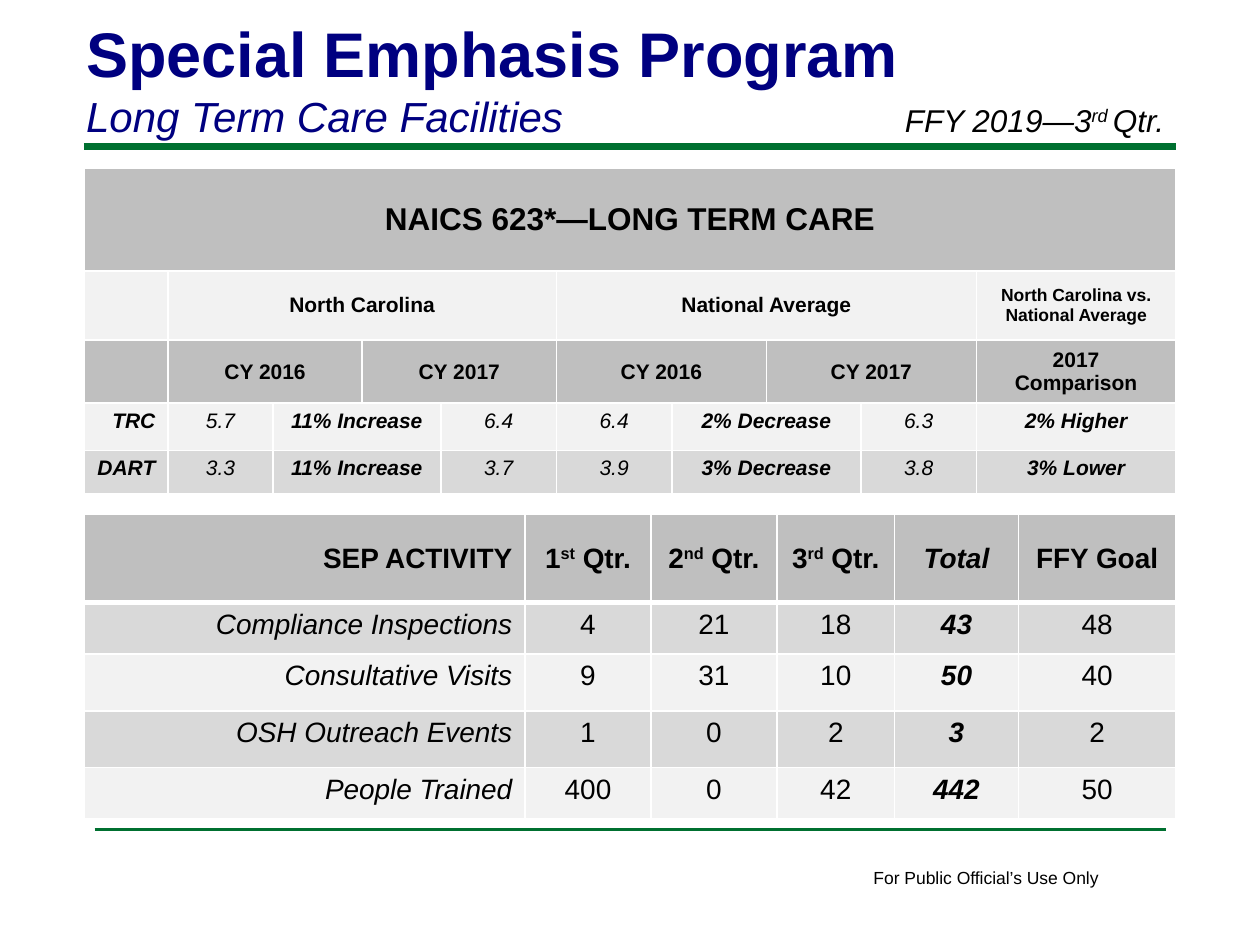
"""Build the long term care special emphasis slide on a grid of twelfths of an inch."""
from lxml import etree
from pptx import Presentation, util as u
from pptx.dml.color import RGBColor
from pptx.enum import shapes, text
from pptx.oxml.ns import qn

T = dict(font="Arial", navy="000080", black="000000", green="007030", white="FFFFFF",
         dark="BFBFBF", mid="D9D9D9", light="F2F2F2",
         title=36, subtitle=24, heading=18, activity=16, rates=12, small=10)
G = u.Inches(1) / 12
AL = text.PP_ALIGN


def write(p, words, size, color="black", **fmt):
    for i, part in enumerate(words.split("^")):
        r = p.add_run()
        r.text = part
        r.font.color.rgb = RGBColor.from_string(T[color])
        for key, value in dict(name=T["font"], size=u.Pt(T[size]), **fmt).items():
            setattr(r.font, key, value)
        if i % 2:
            r.font._element.set("baseline", "30000")


def add_grid(s, top, cols, rows, tones, data, heads, rule, style):
    tbl = s.shapes.add_table(len(rows), len(cols), int(8 * G), int(top * G),
                             int(sum(cols) * G), int(sum(rows) * G)).table
    tbl.first_row = tbl.horz_banding = False
    for parts, sizes, name in ((tbl.columns, cols, "width"), (tbl.rows, rows, "height")):
        for part, size in zip(parts, sizes):
            setattr(part, name, int(size * G))
    for y, line in enumerate(data):
        for x, words in enumerate(line):
            cell = tbl.cell(y, x)
            if words is not None:
                end = x
                while end + 1 < len(line) and line[end + 1] is None:
                    end += 1
                if end > x:
                    cell.merge(tbl.cell(y, end))
            edges = dict(L=1, R=1, T=rule if y == 1 else 1, B=rule if y == 0 else 1)
            for side, width in edges.items():
                ln = etree.SubElement(cell._tc.get_or_add_tcPr(), qn("a:ln" + side),
                                      w=str(u.Pt(width)))
                fill = etree.SubElement(ln, qn("a:solidFill"))
                etree.SubElement(fill, qn("a:srgbClr"), val=T["white"])
            cell.fill.solid()
            cell.fill.fore_color.rgb = RGBColor.from_string(T[tones[y]])
            if y < heads:
                cell.vertical_anchor = text.MSO_ANCHOR.MIDDLE
            p = cell.text_frame.paragraphs[0]
            p.alignment = AL.RIGHT if x == 0 and y >= heads - (heads == 1) else AL.CENTER
            write(p, words or "", **style(y, x))
    tbl.cell(0, 0).text_frame.paragraphs[0].alignment = AL.CENTER if heads > 1 else AL.RIGHT


prs = Presentation()
prs.slide_width, prs.slide_height = int(120 * G), int(90 * G)
s = prs.slides.add_slide(prs.slide_layouts[5])

for left, y, right, width in ((8, 14, 112, 4), (9, 79, 111, 2)):
    rule = s.shapes.add_connector(shapes.MSO_CONNECTOR.STRAIGHT,
                                  *(int(v * G) for v in (left, y, right, y)))
    rule.line.color.rgb = RGBColor.from_string(T["green"])
    rule.line.width = u.Pt(width)
    etree.SubElement(rule._element.spPr, qn("a:effectLst"))

title = s.shapes.title
title.left, title.top, title.width, title.height = (int(v * G) for v in (7, 0.7, 99, 13.3))
tf = title.text_frame
for key, value in dict(word_wrap=True, auto_size=text.MSO_AUTO_SIZE.NONE,
                       vertical_anchor=text.MSO_ANCHOR.BOTTOM).items():
    setattr(tf, key, value)
write(tf.paragraphs[0], "Special Emphasis Program", "title", "navy", bold=True)
write(tf.add_paragraph(), "Long Term Care Facilities", "subtitle", "navy", italic=True)
for p in tf.paragraphs:
    p.alignment = AL.LEFT

add_grid(
    s, 16, [8, 10, 8.5, 7.5, 11, 11, 9, 9, 11, 19], [9.8, 6.6, 6, 4.5, 4.1],
    ["dark", "light", "dark", "light", "mid"],
    [["NAICS 623*—LONG TERM CARE"] + [None] * 9,
     ["", "North Carolina", None, None, None, "National Average", None, None, None,
      "North Carolina vs. National Average"],
     ["", "CY 2016", None, "CY 2017", None, "CY 2016", None, "CY 2017", None,
      "2017 Comparison"],
     ["TRC", "5.7", "11% Increase", None, "6.4", "6.4", "2% Decrease", None, "6.3",
      "2% Higher"],
     ["DART", "3.3", "11% Increase", None, "3.7", "3.9", "3% Decrease", None, "3.8",
      "3% Lower"]],
    3, 1,
    lambda y, x: dict(size="heading" if y == 0 else "small" if (y, x) == (1, 9) else "rates",
                      bold=y < 3 or x in (0, 2, 6, 9), italic=y > 2))

add_grid(
    s, 49, [42, 12, 12, 11.2, 11.8, 15], [8.4, 4.9, 5.4, 5.4, 4.9],
    ["dark", "mid", "light", "mid", "light"],
    [["SEP ACTIVITY", "1^st^ Qtr.", "2^nd^ Qtr.", "3^rd^ Qtr.", "Total", "FFY Goal"],
     ["Compliance Inspections", "4", "21", "18", "43", "48"],
     ["Consultative Visits", "9", "31", "10", "50", "40"],
     ["OSH Outreach Events", "1", "0", "2", "3", "2"],
     ["People Trained", "400", "0", "42", "442", "50"]],
    1, 3,
    lambda y, x: dict(size="activity", bold=y == 0 or x == 4,
                      italic=x == 4 or (x == 0 and y > 0)))

for box, words, size, wrap, italic in (
        ((85, 9, 30, 4.8), "FFY 2019—3^rd ^Qtr.", "heading", True, True),
        ((82, 82, 24.1, 3.2), "For Public Official’s Use Only", "small", False, False)):
    sp = s.shapes.add_textbox(*(int(v * G) for v in box))
    sp.text_frame.word_wrap = wrap
    write(sp.text_frame.paragraphs[0], words, size, italic=italic)

prs.save("out.pptx")
